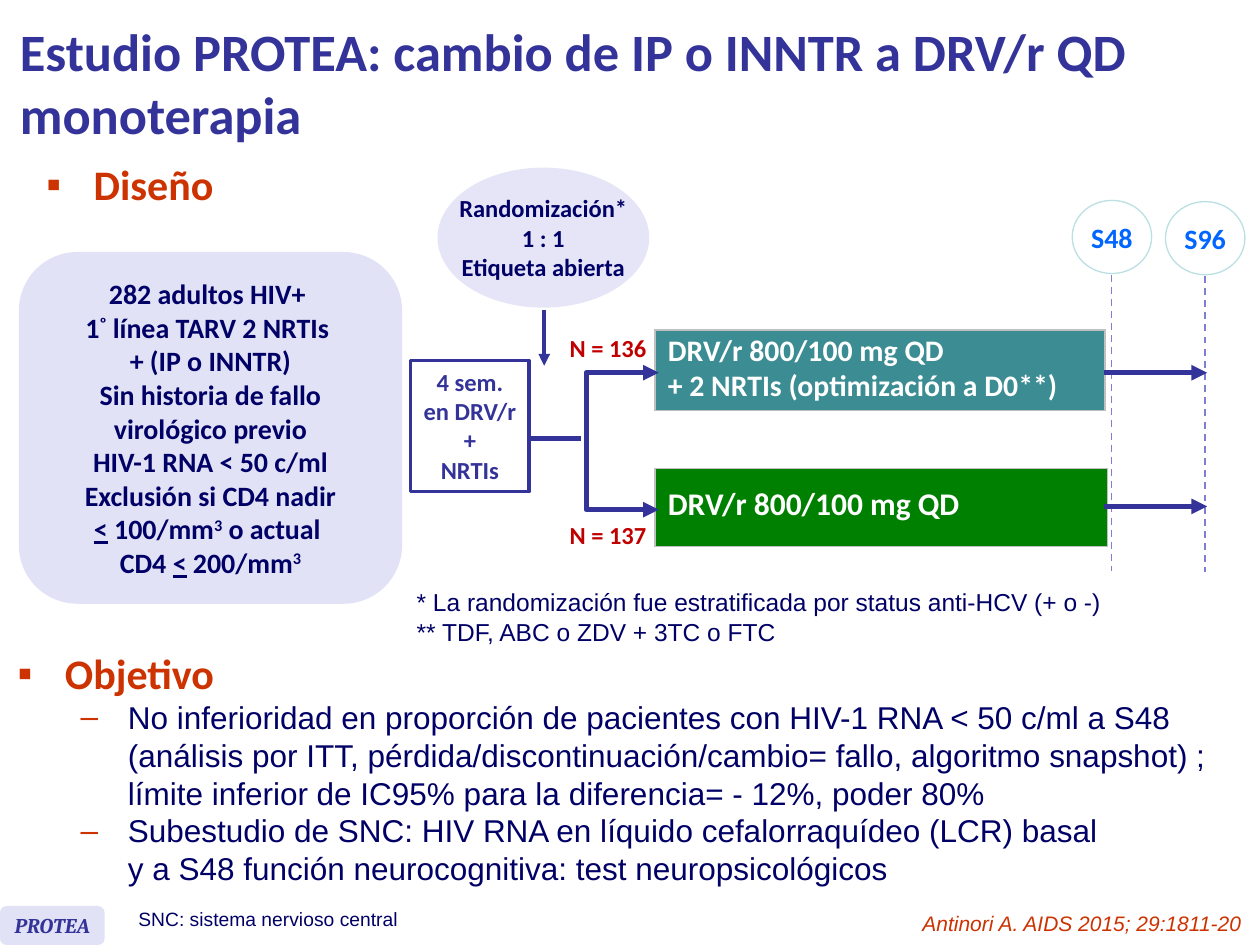
from lxml import etree
from pptx import Presentation
from pptx.dml.color import RGBColor
from pptx.enum import dml, shapes, text
from pptx.oxml import ns
from pptx.util import Pt

NAVY, INDIGO, RED, LILAC, WHITE = "000066", "333399", "CC3300", "E2E2F6", "FFFFFF"
MIDDLE, TOP = text.MSO_ANCHOR.MIDDLE, text.MSO_ANCHOR.TOP
CENTER, LEFT, RIGHT = text.PP_ALIGN.CENTER, text.PP_ALIGN.LEFT, text.PP_ALIGN.RIGHT
OVAL, ROUNDED, RECT = (shapes.MSO_SHAPE.OVAL, shapes.MSO_SHAPE.ROUNDED_RECTANGLE,
                       shapes.MSO_SHAPE.RECTANGLE)

TITLE = ["Estudio PROTEA: cambio de IP o INNTR a DRV/r QD monoterapia"]
GOALS = [
    "No inferioridad en proporción de pacientes con HIV-1 RNA < 50 c/ml a S48 "
    "(análisis por ITT, pérdida/discontinuación/cambio= fallo, algoritmo snapshot) ; "
    "límite inferior de IC95% para la diferencia= - 12%, poder 80%",
    "Subestudio de SNC: HIV RNA en líquido cefalorraquídeo (LCR) basal \n"
    "y a S48 función neurocognitiva: test neuropsicológicos",
]
POPULATION = [
    "282 adultos HIV+ ",
    [("1", ""), ("º", "super"), (" línea TARV 2 NRTIs \n+ (IP o INNTR)", "")],
    "Sin historia de fallo virológico previo",
    "HIV-1 RNA < 50 c/ml",
    "Exclusión si CD4 nadir",
    [("<", "under"), (" 100/mm", ""), ("3", "super"), (" o actual ", "")],
    [("CD4 ", ""), ("<", "under"), (" 200/mm", ""), ("3", "super")],
]
RANDOMIZATION = ["Randomización*", "1 : 1", "Etiqueta abierta"]
RUN_IN = ["4 sem.\nen DRV/r", "+\nNRTIs"]
ARMS = [
    dict(lines=["DRV/r 800/100 mg QD", "+ 2 NRTIs (optimización a D0**)"], fill="3C8C93",
         top=188.6, width=257, height=46, size=17, spacing=0.8, branch=213,
         arrow=213, count="N = 136", count_top=186.5),
    dict(lines=["DRV/r 800/100 mg QD"], fill="008000",
         top=267.8, width=258.5, height=44.6, size=18, spacing=0.7, branch=291.3,
         arrow=289.4, count="N = 137", count_top=293.8),
]
VISITS = [("S48", 612.7, 114.5), ("S96", 666, 115.2)]
FOOTNOTES = ["* La randomización fue estratificada por status anti-HCV (+ o -)",
             "** TDF, ABC o ZDV + 3TC o FTC"]

prs = Presentation()
prs.slide_width, prs.slide_height = Pt(720), Pt(540)
slide = prs.slides.add_slide(prs.slide_layouts[6])


def rgb(color):
    return RGBColor.from_string(color)


def add_xml(parent, tag, **attributes):
    return etree.SubElement(parent, ns.qn(tag), attributes)


def add_bullet(paragraph, bullet, margin):
    props = paragraph._p.get_or_add_pPr()
    props.set("marL", str(Pt(margin)))
    props.set("indent", str(Pt(-27)))
    add_xml(add_xml(props, "a:buClr"), "a:srgbClr", val=RED)
    add_xml(props, "a:buFont", typeface="Arial")
    add_xml(props, "a:buChar", char=bullet)


def write(frame, lines, size=14, color=NAVY, font="Calibri", bold=True, italic=False,
          align=LEFT, anchor=TOP, wrap=True, spacing=None, before=0, bullet=None,
          margin=27, append=False):
    frame.word_wrap = wrap
    frame.vertical_anchor = anchor
    for index, line in enumerate(lines):
        paragraph = frame.add_paragraph() if index or append else frame.paragraphs[0]
        paragraph.alignment = align
        if spacing:
            paragraph.line_spacing = spacing
        if before and index:
            paragraph.space_before = Pt(before)
        if bullet:
            add_bullet(paragraph, bullet, margin)
        for content, style in [(line, "")] if isinstance(line, str) else line:
            for part_index, part in enumerate(content.split("\n")):
                if part_index:
                    paragraph.add_line_break()
                run = paragraph.add_run()
                run.text = part
                face = run.font
                face.name, face.size, face.bold, face.italic = font, Pt(size), bold, italic
                face.color.rgb = rgb(color)
                if style == "under":
                    face.underline = True
                if style == "super":
                    run._r.get_or_add_rPr().set("baseline", "30000")


def add_label(box, lines, **style):
    label = slide.shapes.add_textbox(*map(Pt, box))
    write(label.text_frame, lines, **style)
    return label


def add_block(kind, box, lines, fill, outline=None, weight=1, anchor=MIDDLE, **style):
    block = slide.shapes.add_shape(kind, *map(Pt, box))
    block.shadow.inherit = False
    block.fill.solid()
    block.fill.fore_color.rgb = rgb(fill)
    if outline:
        block.line.color.rgb = rgb(outline)
        block.line.width = Pt(weight)
    else:
        block.line.fill.background()
    write(block.text_frame, lines, anchor=anchor, align=CENTER, **style)


def style_line(item, color, weight, heads=()):
    item.line.color.rgb = rgb(color)
    item.line.width = Pt(weight)
    for head in heads:
        add_xml(item.line._get_or_add_ln(), head, type="triangle")


def add_line(x1, y1, x2, y2, color=INDIGO, weight=3, arrow=False, dashed=False):
    line = slide.shapes.add_connector(shapes.MSO_CONNECTOR.STRAIGHT, *map(Pt, (x1, y1, x2, y2)))
    add_xml(line._element.spPr, "a:effectLst")
    if dashed:
        line.line.dash_style = dml.MSO_LINE.DASH
    style_line(line, color, weight, ["a:tailEnd"] if arrow else [])


def add_arm(arm):
    frame = slide.shapes.add_table(1, 1, *map(Pt, (374.4, arm["top"], arm["width"], arm["height"])))
    cell = frame.table.cell(0, 0)
    write(cell.text_frame, arm["lines"], size=arm["size"], color=WHITE,
          spacing=arm["spacing"], before=3.4)
    cell.vertical_anchor = MIDDLE
    props = cell._tc.get_or_add_tcPr()
    for side in ("a:lnL", "a:lnR", "a:lnT", "a:lnB"):
        border = add_xml(props, side, w=str(Pt(1)))
        add_xml(add_xml(border, "a:solidFill"), "a:srgbClr", val="C0C0C0")
    cell.fill.solid()
    cell.fill.fore_color.rgb = rgb(arm["fill"])


add_label((3, 87, 142.5, 45.4), ["Diseño"], size=24, color=RED, align=CENTER, bullet="▪")
goals = add_label((3, 366.5, 708.5, 145.4), ["Objetivo"], size=24, color=RED, bullet="▪")
write(goals.text_frame, GOALS, size=18, font="Arial", bold=False, bullet="–", margin=63,
      append=True)

for arm in ARMS:
    add_arm(arm)
add_line(311, 177, 311, 209, weight=2.25, arrow=True)
add_block(OVAL, (250, 95.8, 121, 80), RANDOMIZATION, "E5E5F7", wrap=False)
add_block(ROUNDED, (10.8, 144, 219, 201), POPULATION, LILAC, size=16)

branches = [arm["branch"] for arm in ARMS]
fork = slide.shapes.build_freeform(Pt(376.5), Pt(branches[0]))
fork.add_line_segments([(Pt(x), Pt(y)) for x, y in
                        [(335, branches[0]), (335, branches[1]), (376.5, branches[1])]],
                       close=False)
fork = fork.convert_to_shape()
fork.shadow.inherit = False
fork.fill.background()
style_line(fork, INDIGO, 3, ["a:headEnd", "a:tailEnd"])
add_line(297, 250.6, 332, 250.6)

for arm in ARMS:
    add_label((317.5, arm["count_top"], 59, 24.2), [arm["count"]], color="C00000",
              align=RIGHT, wrap=False)
for visit, left, top in VISITS:
    add_block(OVAL, (left, top, 45.4, 41.8), [visit], WHITE, outline="BBE0E3", weight=0.75,
              size=16, color="0066FF", wrap=False)
    center = left + 22.4
    add_line(center, top + 42.4, center, top + 211.7, color="7E7ED4", weight=1, dashed=True)
for arm in ARMS:
    add_line(630.7, arm["arrow"], 689.8, arm["arrow"], arrow=True)

add_label((231, 332, 410.5, 41), FOOTNOTES, font="Arial", bold=False, wrap=False)
add_label((4.3, 3.6, 684, 87), TITLE, size=30, color=INDIGO, anchor=MIDDLE)
add_block(RECT, (234.7, 206, 67.7, 75), RUN_IN, WHITE, outline=INDIGO, weight=2,
          color=INDIGO, anchor=TOP, wrap=False)
add_block(ROUNDED, (0, 517.7, 59.8, 22.3), ["PROTEA"], LILAC, size=12, color=INDIGO,
          font="Cambria", italic=True, wrap=False)
add_label((71.3, 514.8, 164, 20.9), ["SNC: sistema nervioso central"], size=11, font="Arial",
          bold=False, align=CENTER, wrap=False)
add_label((443.5, 517, 273, 21.6), ["Antinori A. AIDS 2015; 29:1811-20"], size=12, color=RED,
          font="Arial", bold=False, italic=True, align=RIGHT)

prs.save("out.pptx")
